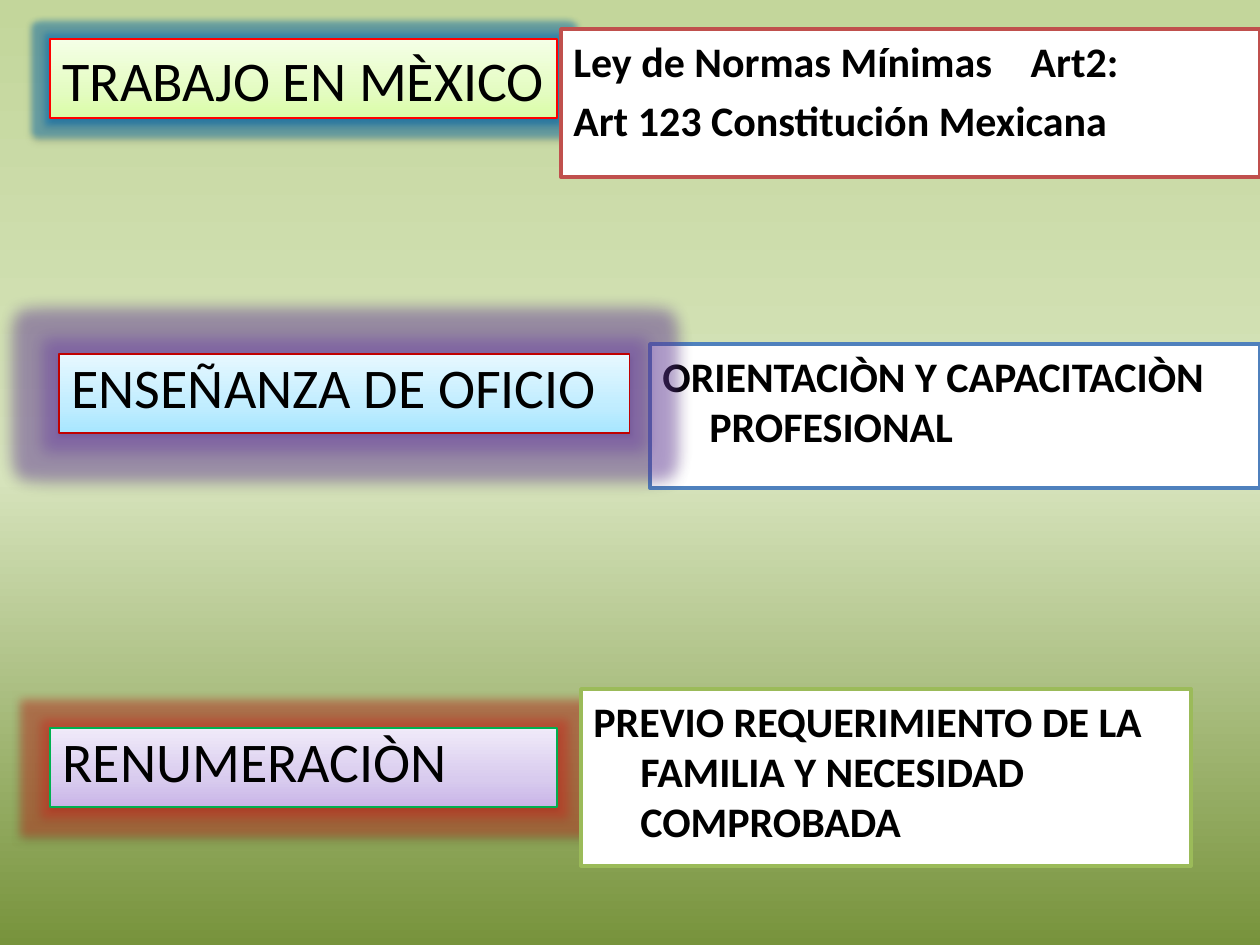
from copy import deepcopy
from lxml.etree import SubElement
from pptx import Presentation
from pptx.dml.color import RGBColor
from pptx.enum.shapes import MSO_SHAPE as Shape
from pptx.enum.text import MSO_ANCHOR as Anchor, PP_ALIGN as Align
from pptx.oxml.ns import qn
from pptx.util import Pt

PX = 914400 // 126
color = RGBColor.from_string


def paint_gradient(fill, element, stops, angle):
    fill.gradient()
    fill.gradient_angle = angle
    stop_list = next(element.iter(qn("a:gsLst")))
    stop_list.append(deepcopy(stop_list[0]))
    for stop, position, shade in zip(fill.gradient_stops, (0, stops[1], 100), stops[0]):
        stop.position = position / 100
        stop.color.rgb = color(shade)


def add_box(page, area, line, width, lines, size, bold, spacing):
    box = page.shapes.add_shape(Shape.RECTANGLE, *(value * PX for value in area))
    box.shadow.inherit = False
    box.line.color.rgb = color(line)
    box.line.width = Pt(width)
    frame = box.text_frame
    frame.word_wrap = True
    frame.vertical_anchor = Anchor.TOP
    frame.margin_right = 4 * PX
    for index, spans in enumerate(lines):
        para = frame.add_paragraph() if index else frame.paragraphs[0]
        for text in spans:
            span = para.add_run()
            span.text = text
            if text == " ":
                span.font._element.set("spc", "1650")
        para.alignment = Align.LEFT
        para.space_before = Pt(size * 0.2)
        para.line_spacing = spacing
        para.font.name = "Calibri"
        para.font.size = Pt(size)
        para.font.bold = bold
        para.font.color.rgb = color("000000")
        properties = para._p.get_or_add_pPr()
        properties.set("marL", str(47 * PX))
        properties.set("indent", str(-47 * PX))
    return box


deck = Presentation()
deck.slide_width = 1260 * PX
deck.slide_height = 945 * PX
page = deck.slides.add_slide(deck.slide_layouts[6])
paint_gradient(page.background.fill, page._element,
               (("C3D69B", "D7E4BD", "77933C"), 50), 270)

green = "DAFDA7", "E4FCC2", "F5FFE7"
purple = "C9B5E8", "D8CBEE", "F0EAF9"
blue = "A7E6FF", "C1EDFF", "E7F8FF"
headings = {
    "work": ("TRABAJO EN MÈXICO", (50, 39, 507, 79), green, "FF0000", 1.0, "0070C0", 7),
    "pay": ("RENUMERACIÒN", (50, 728, 507, 79), purple, "00B050", 0.9, "D62A1E", 11),
    "trade": ("ENSEÑANZA DE OFICIO", (59, 354, 571, 79), blue, "C00000", 0.9, "7040B0", 18),
}
details = {
    "training": ([["ORIENTACIÒN Y CAPACITACIÒN PROFESIONAL"]], (650, 344, 610, 144), "4F81BD"),
    "law": ([["Ley de Normas Mínimas", " ", "Art2:"], ["Art 123 Constitución Mexicana"]],
            (561, 29, 699, 148), "C0504D"),
    "need": ([["PREVIO REQUERIMIENTO DE LA FAMILIA Y NECESIDAD COMPROBADA"]],
             (581, 689, 610, 177), "9BBB59"),
}

for name in ("work", "pay", "training", "trade", "law", "need"):
    if name in details:
        lines, area, line = details[name]
        box = add_box(page, area, line, 2, lines, 24, True, 1.0)
        box.fill.solid()
        box.fill.fore_color.rgb = color("FFFFFF")
        continue
    text, area, shades, line, spacing, halo, radius = headings[name]
    box = add_box(page, area, line, 0.75, [[text]], 32, False, spacing)
    paint_gradient(box.fill, box._element, (shades, 35), 90)
    effects = box._element.spPr.find(qn("a:effectLst"))
    glow = SubElement(effects, qn("a:glow"), rad=str(Pt(radius)))
    shadow = SubElement(effects, qn("a:outerShdw"), blurRad=str(Pt(3.1)),
                        dist=str(Pt(1.6)), dir="5400000", rotWithShape="0")
    for effect, shade, opacity in ((glow, halo, 40), (shadow, "000000", 38)):
        tint = SubElement(effect, qn("a:srgbClr"), val=shade)
        SubElement(tint, qn("a:alpha"), val=str(opacity * 1000))

deck.save("out.pptx")
